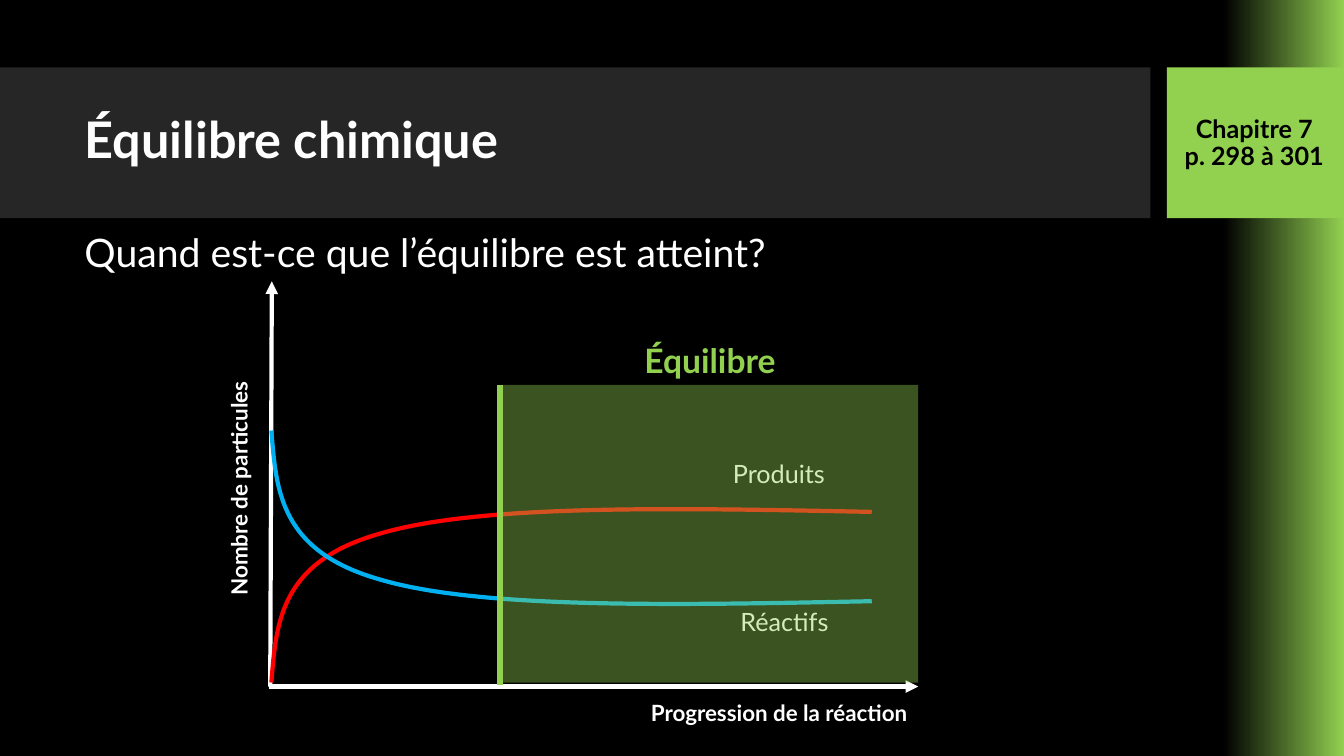
from lxml import etree
from pptx import Presentation
from pptx.dml.color import RGBColor
from pptx.enum import shapes, text
from pptx.oxml import ns
from pptx.util import Cm, Pt


class Theme:
    font = "Lato"
    black, white, gray = "000000", "FFFFFF", "262626"
    green, red, blue = "92D050", "FF0000", "00B0F0"
    title, ask, zone, body, axis = 36, 28, 24, 18, 16
    thin, thick = 3, 4.5


LEFT, MID, RIGHT = text.PP_ALIGN.LEFT, text.PP_ALIGN.CENTER, text.PP_ALIGN.RIGHT

# Lengths in centimetres: left, top, width, height
SIZE = (33.87, 19.05)
BAND = (0, 1.7, 28.99, 3.8)
TAB = (29.41, 1.7, 4.46, 3.8)
ZONE = (12.65, 9.7, 10.49, 7.5)

# lines, box, size, colour, bold, alignment
HEADS = [
    (["Équilibre chimique"], (1.89, 2.08, 26.7, 3), Theme.title, Theme.white, True, LEFT),
    (["Chapitre 7", "p. 298 à 301"], (29.36, 1.7, 4.5, 3.84),
     Theme.body, Theme.black, True, MID),
]
LABELS = [
    (["Progression de la réaction"], (13.37, 17.49, 9.75, 1.17),
     Theme.axis, Theme.white, True, RIGHT),
    (["Produits"], (18.22, 11.43, 3.76, 1.27), Theme.body, Theme.white, False, LEFT),
    (["Réactifs"], (18.41, 15.15, 3.76, 1.27), Theme.body, Theme.white, False, LEFT),
]
RISE = (["Nombre de particules"], (1.5, 11.84, 9.04, 0.94),
        Theme.axis, Theme.white, True, MID)
NOTES = [
    (["Quand est-ce que l’équilibre est atteint?"], (1.88, 5.64, 26.7, 1.45),
     Theme.ask, Theme.white, False, LEFT),
    (["Équilibre"], (12.65, 8.45, 10.49, 1.27), Theme.zone, Theme.green, True, MID),
]

AXES = [((6.81, 17.3), (6.85, 7.09)), ((6.78, 17.3), (23.14, 17.3))]
START = ((12.6, 17.25), (12.6, 9.7))

# Two Bézier arcs sharing their middle point; reactants mirror products
PRODUCTS = [(6.84, 17.2), (6.96, 15.67), (7.06, 14.15), (9.6, 13.44),
            (12.12, 12.7), (17.04, 12.8), (21.97, 12.9)]
MIRROR = 28.05
REACTANTS = [(x, MIRROR - y) for x, y in PRODUCTS]


def rgb(color):
    return RGBColor.from_string(color)


def label(slide, lines, box, size, color, bold, align, space=None):
    item = slide.shapes.add_textbox(*map(Cm, box))
    frame = item.text_frame
    frame.word_wrap = True
    for i, line in enumerate(lines):
        para = frame.paragraphs[0] if i == 0 else frame.add_paragraph()
        para.alignment = align
        para.line_spacing = space
        run = para.add_run()
        run.text = line
        font = run.font
        font.name, font.size, font.bold = Theme.font, Pt(size), bold
        font.color.rgb = rgb(color)
    return item


def block(slide, box, color, alpha=None):
    item = slide.shapes.add_shape(shapes.MSO_SHAPE.RECTANGLE, *map(Cm, box))
    item.shadow.inherit = False
    item.fill.solid()
    item.fill.fore_color.rgb = rgb(color)
    item.line.fill.background()
    if alpha:
        tint = item.element.spPr.find(".//" + ns.qn("a:srgbClr"))
        etree.SubElement(tint, ns.qn("a:alpha"), val=str(alpha * 1000))


def stroke(slide, ends, color, width, arrow=False):
    (x1, y1), (x2, y2) = ends
    item = slide.shapes.add_connector(
        shapes.MSO_CONNECTOR.STRAIGHT, Cm(x1), Cm(y1), Cm(x2), Cm(y2))
    item.line.color.rgb = rgb(color)
    item.line.width = Pt(width)
    if arrow:
        ln = item.element.spPr.find(ns.qn("a:ln"))
        etree.SubElement(ln, ns.qn("a:tailEnd"), type="triangle")
    etree.SubElement(item.element.spPr, ns.qn("a:effectLst"))


def curve(slide, points, color):
    """Draw the anchors as a freeform, then bend each segment into a cubic."""
    spots = [(Cm(x), Cm(y)) for x, y in points]
    pen = slide.shapes.build_freeform(*spots[0])
    pen.add_line_segments(spots[3::3], close=False)
    item = pen.convert_to_shape()
    item.shadow.inherit = False
    item.fill.background()
    item.line.color.rgb = rgb(color)
    item.line.width = Pt(Theme.thin)
    lines = list(item.element.spPr.iter(ns.qn("a:lnTo")))
    for i, line in enumerate(lines):
        line.tag = ns.qn("a:cubicBezTo")
        for n, (x, y) in enumerate(spots[3 * i + 1:3 * i + 3]):
            dot = etree.Element(ns.qn("a:pt"), x=str(x - item.left), y=str(y - item.top))
            line.insert(n, dot)


def backdrop(slide):
    fill = slide.background.fill
    fill.gradient()
    fill.gradient_angle = 0
    for stop, (place, color) in zip(
            fill.gradient_stops, [(0.91, Theme.black), (1, Theme.green)]):
        stop.position = place
        stop.color.rgb = rgb(color)


def main():
    deck = Presentation()
    deck.slide_width, deck.slide_height = map(Cm, SIZE)
    slide = deck.slides.add_slide(deck.slide_layouts[6])
    backdrop(slide)

    block(slide, BAND, Theme.gray)
    block(slide, TAB, Theme.green)
    for entry in HEADS:
        head = label(slide, *entry, space=0.9)
        head.text_frame.vertical_anchor = text.MSO_ANCHOR.MIDDLE

    for ends in AXES:
        stroke(slide, ends, Theme.white, Theme.thin, arrow=True)
    label(slide, *RISE).rotation = 270
    curve(slide, PRODUCTS, Theme.red)
    curve(slide, REACTANTS, Theme.blue)
    for entry in LABELS:
        label(slide, *entry)

    stroke(slide, START, Theme.green, Theme.thick)
    block(slide, ZONE, Theme.green, alpha=40)
    for entry in NOTES:
        label(slide, *entry)
    deck.save("out.pptx")


if __name__ == "__main__":
    main()
